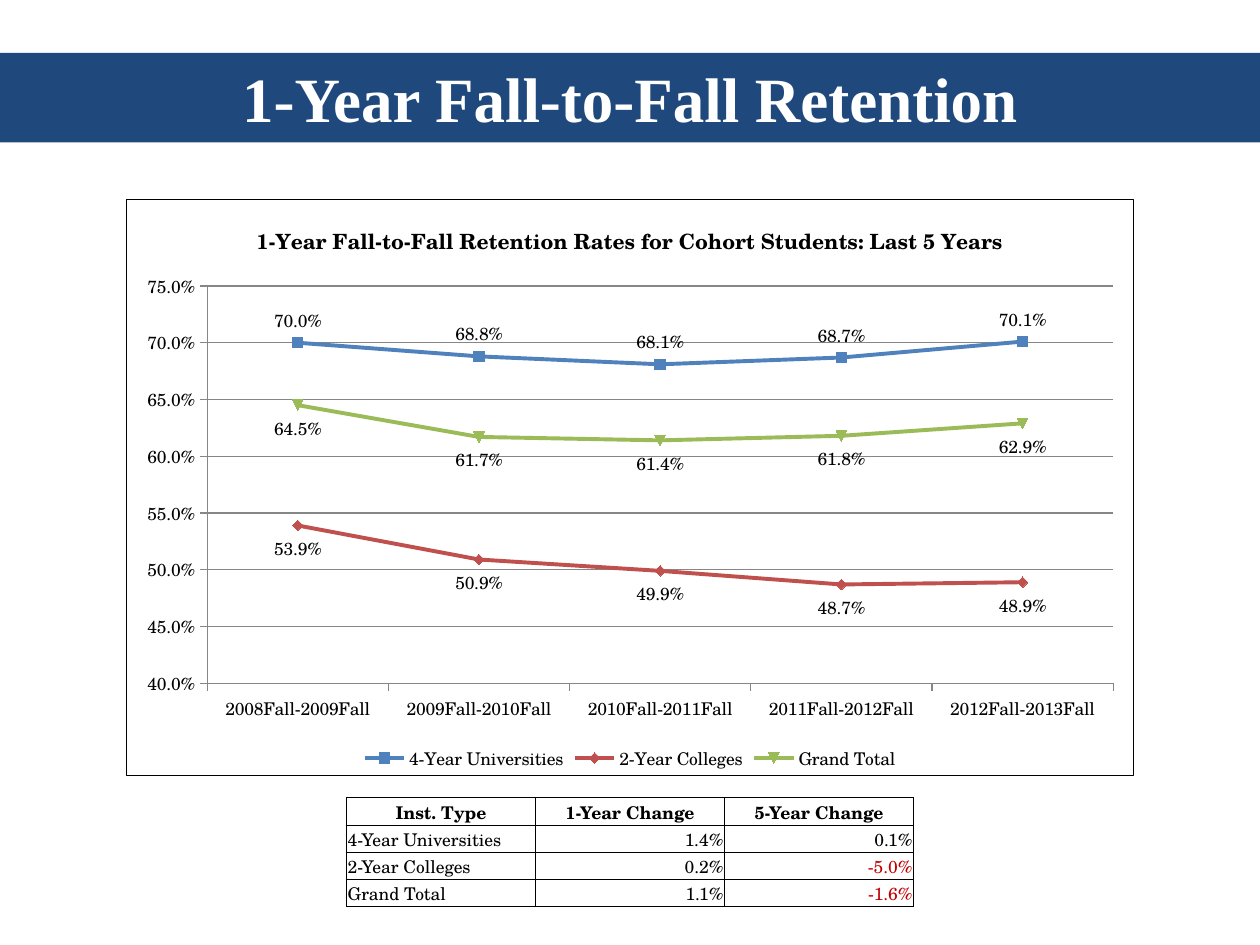
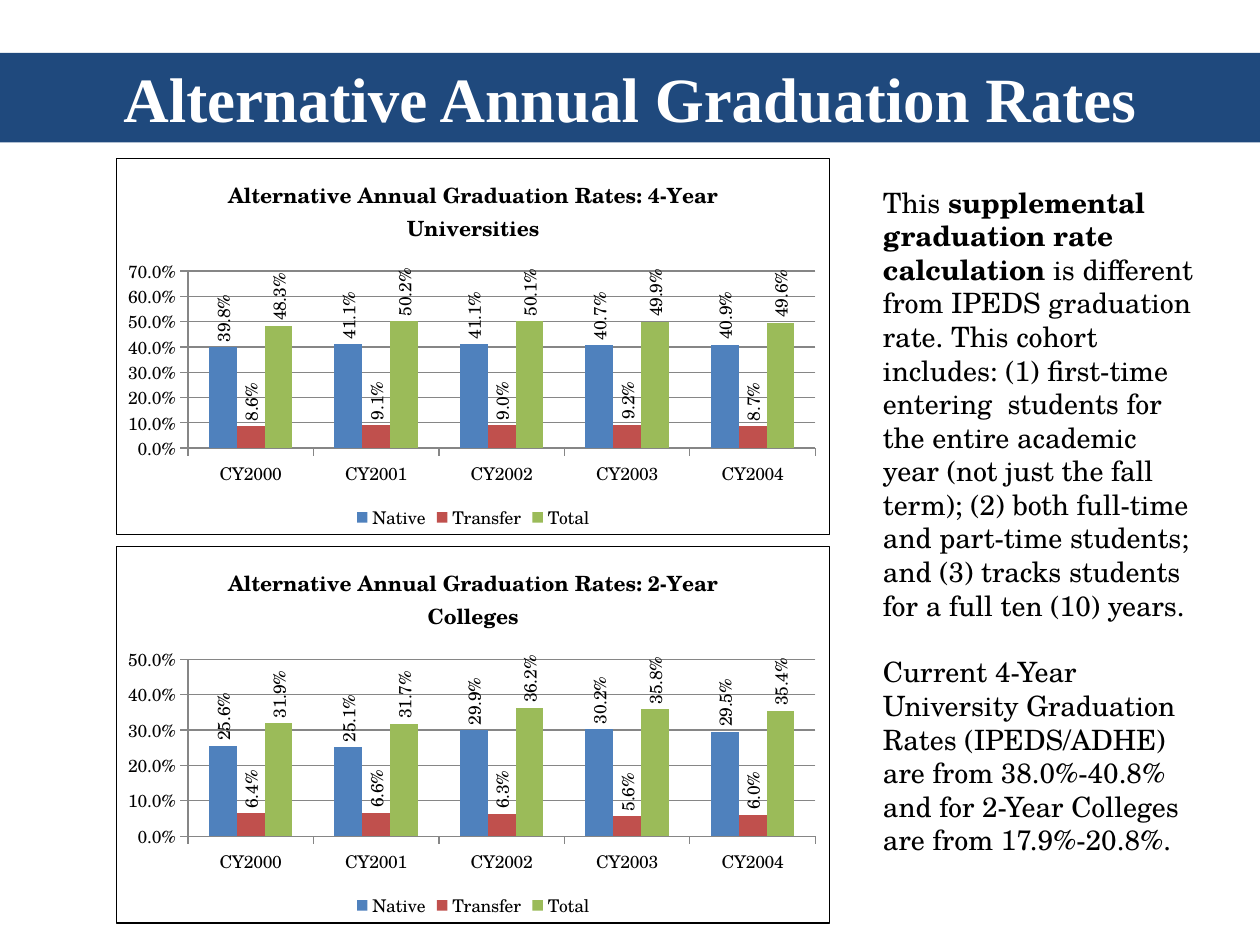
from pptx import Presentation
from pptx.chart.data import CategoryChartData
from pptx.dml.color import RGBColor
from pptx.enum.chart import XL_CHART_TYPE, XL_LABEL_POSITION, XL_LEGEND_POSITION, XL_TICK_MARK
from pptx.enum.text import MSO_ANCHOR, MSO_AUTO_SIZE, PP_ALIGN
from pptx.oxml import parse_xml
from pptx.oxml.ns import nsdecls, qn
from pptx.util import Inches, Pt

NAVY = RGBColor(0x1F, 0x49, 0x7D)
WHITE = RGBColor(0xFF, 0xFF, 0xFF)
BLACK = RGBColor(0x00, 0x00, 0x00)
GRAY = RGBColor(0x86, 0x86, 0x86)
LOSS_RED = RGBColor(0xC0, 0x00, 0x00)
SERIES_COLORS = (
    RGBColor(0x4F, 0x81, 0xBD),
    RGBColor(0xC0, 0x50, 0x4D),
    RGBColor(0x9B, 0xBB, 0x59),
)
BODY_FONT = "TeX Gyre Schola"
TITLE_FONT = "Times New Roman"
PERCENT = "0.0%"
TITLE_ONLY = 5


def format_font(font, size=10, bold=False, color=BLACK, name=BODY_FONT):
    font.size = Pt(size)
    font.bold = bold
    font.color.rgb = color
    font.name = name


def write(paragraph, text, align=PP_ALIGN.LEFT, **font_format):
    """Append one formatted run to the paragraph."""
    paragraph.alignment = align
    run = paragraph.add_run()
    run.text = text
    format_font(run.font, **font_format)


def outline_xml(tag, width):
    return (f'<a:{tag} {nsdecls("a")} w="{Pt(width)}"><a:solidFill>'
            f'<a:srgbClr val="{BLACK}"/></a:solidFill></a:{tag}>')


def frame_chart(chart):
    """Give the chart a thin square-cornered border."""
    space = chart.element
    if space.find(qn("c:roundedCorners")) is None:
        space.find(qn("c:date1904")).addnext(
            parse_xml(f'<c:roundedCorners {nsdecls("c")} val="0"/>'))
    space.find(qn("c:chart")).addnext(parse_xml(
        f'<c:spPr {nsdecls("c", "a")}>{outline_xml("ln", 0.75)}</c:spPr>'))


def place_plot(chart, x, y, w, h):
    """Fix the inner plot area as fractions of the chart."""
    plot_area = chart.element.find(qn("c:chart")).find(qn("c:plotArea"))
    for automatic in plot_area.findall(qn("c:layout")):
        plot_area.remove(automatic)
    sizes = "".join(f'<c:{key} val="{value}"/>'
                    for key, value in zip("xywh", (x, y, w, h)))
    plot_area.insert(0, parse_xml(
        f'<c:layout {nsdecls("c")}><c:manualLayout><c:layoutTarget val="inner"/>'
        f'<c:xMode val="edge"/><c:yMode val="edge"/>{sizes}'
        '</c:manualLayout></c:layout>'))


def turn_labels_upright(chart):
    for labels in chart.element.iter(qn("c:dLbls")):
        for body in labels.iter(qn("a:bodyPr")):
            body.set("rot", "-5400000")
            body.set("vert", "horz")


class Deck:
    """Holds the shared style and the slide being built."""

    def __init__(self):
        self.presentation = Presentation()
        self.presentation.slide_width = Inches(10)
        self.presentation.slide_height = Inches(7.5)
        self.slide = None

    def add_slide(self, heading):
        layout = self.presentation.slide_layouts[TITLE_ONLY]
        self.slide = self.presentation.slides.add_slide(layout)
        band = self.slide.shapes.title
        band.left, band.top = Inches(0), Inches(0.42)
        band.width, band.height = Inches(10), Inches(0.71)
        band.fill.solid()
        band.fill.fore_color.rgb = NAVY
        band.text_frame.auto_size = MSO_AUTO_SIZE.NONE
        band.text_frame.vertical_anchor = MSO_ANCHOR.MIDDLE
        write(band.text_frame.paragraphs[0], heading, align=PP_ALIGN.CENTER,
              size=36, bold=True, color=WHITE, name=TITLE_FONT)

    def add_rate_chart(self, kind, box, heading, categories, rates, scale, plot):
        """Add a percentage chart; scale is the axis minimum, maximum and step."""
        data = CategoryChartData(number_format=PERCENT)
        data.categories = categories
        for name, values in rates.items():
            data.add_series(name, values)
        chart = self.slide.shapes.add_chart(kind, *map(Inches, box), data).chart
        format_font(chart.font)
        chart.has_title = True
        write(chart.chart_title.text_frame.paragraphs[0], heading,
              align=PP_ALIGN.CENTER, size=12, bold=True)
        chart.chart_title.include_in_layout = False
        chart.has_legend = True
        chart.legend.position = XL_LEGEND_POSITION.BOTTOM
        chart.legend.include_in_layout = False
        self.style_axes(chart, *scale)
        frame_chart(chart)
        place_plot(chart, *plot)
        chart.plots[0].vary_by_categories = False
        return chart

    def style_axes(self, chart, minimum, maximum, step):
        rate_axis = chart.value_axis
        rate_axis.minimum_scale = minimum
        rate_axis.maximum_scale = maximum
        rate_axis.major_unit = step
        rate_axis.has_major_gridlines = True
        rate_axis.major_gridlines.format.line.color.rgb = GRAY
        rate_axis.tick_labels.number_format = PERCENT
        rate_axis.tick_labels.number_format_is_linked = False
        for axis in (rate_axis, chart.category_axis):
            axis.major_tick_mark = XL_TICK_MARK.OUTSIDE
            axis.minor_tick_mark = XL_TICK_MARK.NONE
            axis.format.line.color.rgb = GRAY

    def label_values(self, series, position):
        labels = series.data_labels
        labels.show_value = True
        labels.number_format = PERCENT
        labels.number_format_is_linked = False
        labels.position = position
        format_font(labels.font)

    def add_line_chart(self, *content, positions):
        chart = self.add_rate_chart(XL_CHART_TYPE.LINE_MARKERS, *content)
        for series, color, position in zip(chart.series, SERIES_COLORS, positions):
            series.smooth = False
            series.format.line.color.rgb = color
            series.format.line.width = Pt(2.25)
            series.marker.size = 6
            series.marker.format.fill.solid()
            series.marker.format.fill.fore_color.rgb = color
            series.marker.format.line.color.rgb = color
            self.label_values(series, position)

    def add_column_chart(self, *content):
        chart = self.add_rate_chart(XL_CHART_TYPE.COLUMN_CLUSTERED, *content)
        chart.plots[0].gap_width = 150
        chart.plots[0].overlap = 0
        for series, color in zip(chart.series, SERIES_COLORS):
            series.format.fill.solid()
            series.format.fill.fore_color.rgb = color
            self.label_values(series, XL_LABEL_POSITION.OUTSIDE_END)
        turn_labels_upright(chart)

    def add_change_table(self, box, rows):
        frame = self.slide.shapes.add_table(
            len(rows), len(rows[0]), *map(Inches, box))
        table = frame.table
        table.first_row = table.horz_banding = False
        for r, row in enumerate(rows):
            for c, text in enumerate(row):
                cell = table.cell(r, c)
                cell.fill.background()
                cell.vertical_anchor = MSO_ANCHOR.BOTTOM
                cell.margin_left = cell.margin_right = cell.margin_top = Inches(0.01)
                cell.margin_bottom = 0
                if r == 0:
                    align = PP_ALIGN.CENTER
                else:
                    align = PP_ALIGN.RIGHT if c else PP_ALIGN.LEFT
                write(cell.text_frame.paragraphs[0], text, align=align, bold=r == 0,
                      color=LOSS_RED if text.startswith("-") else BLACK)
        for properties in frame.element.iter(qn("a:tcPr")):
            for i, side in enumerate(("lnL", "lnR", "lnT", "lnB")):
                properties.insert(i, parse_xml(outline_xml(side, 1)))

    def add_commentary(self, box, paragraphs):
        """Add text; each paragraph is a list of (text, bold) pairs."""
        text_frame = self.slide.shapes.add_textbox(*map(Inches, box)).text_frame
        text_frame.word_wrap = True
        for i, pieces in enumerate(paragraphs):
            paragraph = text_frame.add_paragraph() if i else text_frame.paragraphs[0]
            if i:
                paragraph.space_before = Pt(19)
            for text, bold in pieces:
                write(paragraph, text, size=16, bold=bold)


def build_retention(deck):
    deck.add_slide("1-Year Fall-to-Fall Retention")
    above, below = XL_LABEL_POSITION.ABOVE, XL_LABEL_POSITION.BELOW
    deck.add_line_chart(
        (1, 1.58, 8, 4.58),
        "1-Year Fall-to-Fall Retention Rates for Cohort Students: Last 5 Years",
        [f"{year}Fall-{year + 1}Fall" for year in range(2008, 2013)],
        {
            "4-Year Universities": (0.7, 0.688, 0.681, 0.687, 0.701),
            "2-Year Colleges": (0.539, 0.509, 0.499, 0.487, 0.489),
            "Grand Total": (0.645, 0.617, 0.614, 0.618, 0.629),
        },
        (0.4, 0.75, 0.05),
        (0.08, 0.15, 0.9, 0.69),
        positions=(above, below, below),
    )
    deck.add_change_table((2.75, 6.33, 4.5, 0.71), (
        ("Inst. Type", "1-Year Change", "5-Year Change"),
        ("4-Year Universities", "1.4%", "0.1%"),
        ("2-Year Colleges", "0.2%", "-5.0%"),
        ("Grand Total", "1.1%", "-1.6%"),
    ))


def build_graduation(deck):
    deck.add_slide("Alternative Annual Graduation Rates")
    cohorts = [f"CY{year}" for year in range(2000, 2005)]
    sectors = (
        ("4-Year Universities", 1.25, 0.7, {
            "Native": (0.398, 0.411, 0.411, 0.407, 0.409),
            "Transfer": (0.086, 0.091, 0.09, 0.092, 0.087),
            "Total": (0.483, 0.502, 0.501, 0.499, 0.496),
        }),
        ("2-Year Colleges", 4.33, 0.5, {
            "Native": (0.256, 0.251, 0.299, 0.302, 0.295),
            "Transfer": (0.064, 0.066, 0.063, 0.056, 0.06),
            "Total": (0.319, 0.317, 0.362, 0.358, 0.354),
        }),
    )
    for sector, top, maximum, rates in sectors:
        deck.add_column_chart(
            (0.92, top, 5.67, 3), f"Alternative Annual Graduation Rates: {sector}",
            cohorts, rates, (0, maximum, 0.1), (0.1, 0.3, 0.88, 0.47))
    deck.add_commentary((6.91, 1.42, 2.67, 5.49), (
        [
            ("This ", False),
            ("supplemental graduation rate calculation", True),
            (" is different from IPEDS graduation rate. This cohort includes: "
             "(1) first-time entering  students for the entire academic year "
             "(not just the fall term); (2) both full-time and part-time students; "
             "and (3) tracks students for a full ten (10) years.", False),
        ],
        [
            ("Current 4-Year University Graduation Rates (IPEDS/ADHE) are from "
             "38.0%-40.8% and for 2-Year Colleges are from 17.9%-20.8%.", False),
        ],
    ))


def main():
    deck = Deck()
    build_retention(deck)
    build_graduation(deck)
    deck.presentation.save("out.pptx")


if __name__ == "__main__":
    main()
